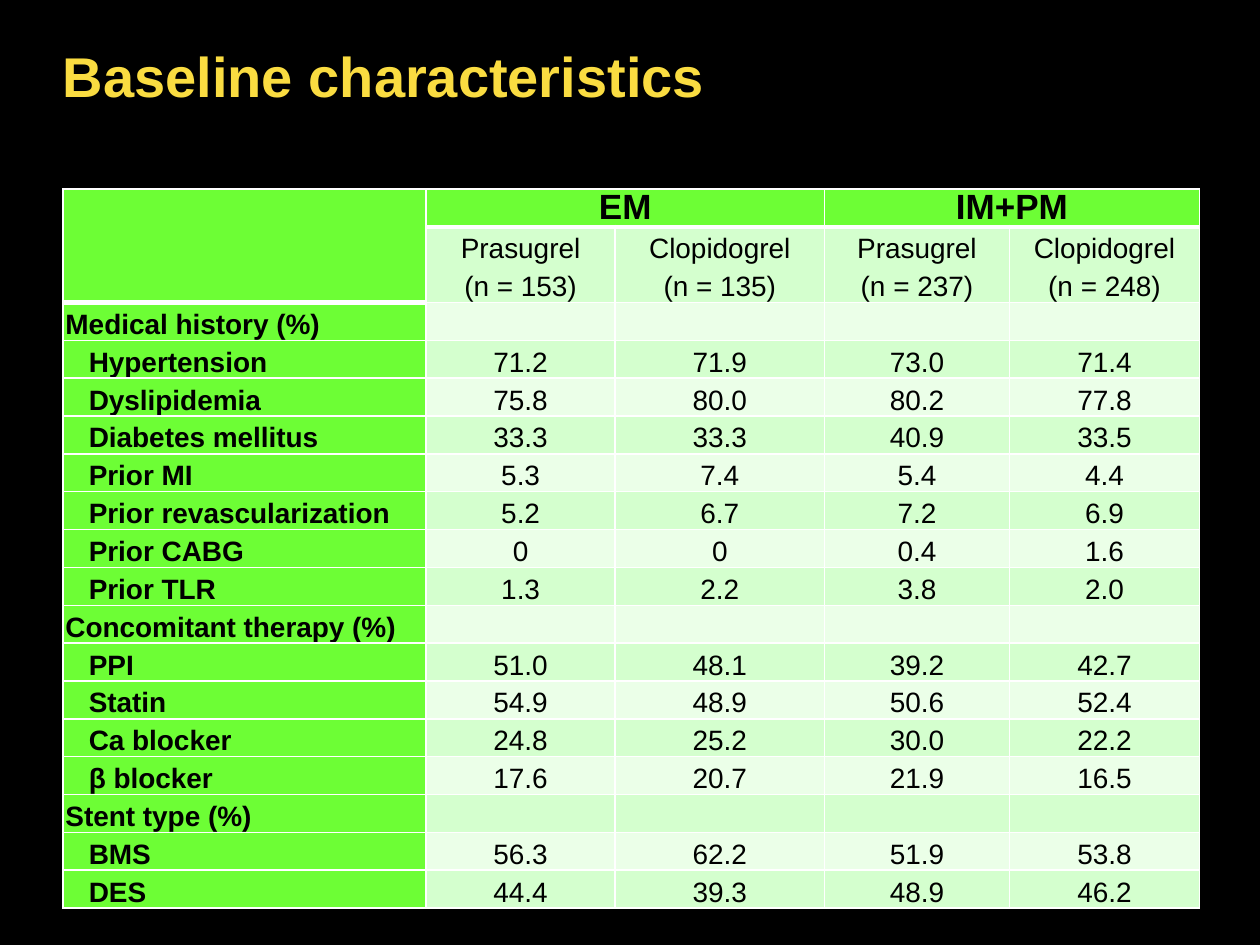
from dataclasses import dataclass

from lxml import etree
from pptx import Presentation
from pptx import util as u
from pptx.dml.color import RGBColor
from pptx.enum import text
from pptx.oxml.ns import qn


@dataclass(frozen=True)
class Theme:
    font: str = "Arial"
    background: str = "000000"
    title: str = "FADC41"
    ink: str = "000000"
    border: str = "FFFFFF"
    header: str = "6DFE35"
    bands: tuple = ("EBFFE8", "D4FFCE")
    title_size: float = 32
    group_size: float = 20
    body_size: float = 16
    title_spacing: float = 34
    table_spacing: float = 21.6
    thin: float = 1
    thick: float = 3


GROUPS = ("EM", "IM+PM")
ARMS = (
    ("Prasugrel", "(n = 153)"),
    ("Clopidogrel", "(n = 135)"),
    ("Prasugrel", "(n = 237)"),
    ("Clopidogrel", "(n = 248)"),
)
SECTIONS = {
    "Medical history (%)": (
        ("Hypertension", "71.2", "71.9", "73.0", "71.4"),
        ("Dyslipidemia", "75.8", "80.0", "80.2", "77.8"),
        ("Diabetes mellitus", "33.3", "33.3", "40.9", "33.5"),
        ("Prior MI", "5.3", "7.4", "5.4", "4.4"),
        ("Prior revascularization", "5.2", "6.7", "7.2", "6.9"),
        ("Prior CABG", "0", "0", "0.4", "1.6"),
        ("Prior TLR", "1.3", "2.2", "3.8", "2.0"),
    ),
    "Concomitant therapy (%)": (
        ("PPI", "51.0", "48.1", "39.2", "42.7"),
        ("Statin", "54.9", "48.9", "50.6", "52.4"),
        ("Ca blocker", "24.8", "25.2", "30.0", "22.2"),
        ("β blocker", "17.6", "20.7", "21.9", "16.5"),
    ),
    "Stent type (%)": (
        ("BMS", "56.3", "62.2", "51.9", "53.8"),
        ("DES", "44.4", "39.3", "48.9", "46.2"),
    ),
}
COLUMN_WIDTHS = (7.32, 3.81, 4.22, 3.73, 3.83)
ROW_HEIGHT = 0.76
CELL_MARGIN = 0.05
ITEM_INDENT = 0.47


class SlideBuilder:
    def __init__(self, slide, theme):
        self.slide = slide
        self.theme = theme

    def background(self):
        fill = self.slide.background.fill
        fill.solid()
        fill.fore_color.rgb = RGBColor.from_string(self.theme.background)

    def add_lines(self, frame, lines, size, color, bold, spacing, align):
        for index, line in enumerate(lines):
            paragraph = frame.paragraphs[0] if index == 0 else frame.add_paragraph()
            paragraph.alignment = align
            paragraph.line_spacing = u.Pt(spacing)
            run = paragraph.add_run()
            run.text = line
            run.font.name = self.theme.font
            run.font.size = u.Pt(size)
            run.font.bold = bold
            run.font.color.rgb = RGBColor.from_string(color)

    def title(self, words, left, top, width, height):
        box = self.slide.shapes.add_textbox(
            u.Cm(left), u.Cm(top), u.Cm(width), u.Cm(height))
        frame = box.text_frame
        frame.word_wrap = True
        frame.vertical_anchor = text.MSO_ANCHOR.MIDDLE
        self.add_lines(frame, [words], self.theme.title_size, self.theme.title,
                       True, self.theme.title_spacing, text.PP_ALIGN.LEFT)

    def borders(self, cell, top, bottom):
        properties = cell._tc.get_or_add_tcPr()
        weights = {"lnL": self.theme.thin, "lnR": self.theme.thin,
                   "lnT": top, "lnB": bottom}
        for position, (side, weight) in enumerate(weights.items()):
            line = etree.Element(qn(f"a:{side}"), w=str(u.Pt(weight)))
            fill = etree.SubElement(line, qn("a:solidFill"))
            etree.SubElement(fill, qn("a:srgbClr"), val=self.theme.border)
            properties.insert(position, line)

    def table(self, left, top, widths, heights):
        frame = self.slide.shapes.add_table(
            len(heights), len(widths), u.Cm(left), u.Cm(top),
            u.Cm(sum(widths)), u.Cm(sum(heights)))
        table = frame.table
        table.first_row = table.horz_banding = False
        for column, width in zip(table.columns, widths):
            column.width = u.Cm(width)
        for row, height in zip(table.rows, heights):
            row.height = u.Cm(height)
        heavy = {(0, column) for column in range(len(widths))} | {(1, 0)}
        for row in range(len(heights)):
            for column in range(len(widths)):
                cell = table.cell(row, column)
                cell.margin_left = cell.margin_right = u.Cm(CELL_MARGIN)
                cell.margin_top = cell.margin_bottom = 0
                is_header = row == 0 or column == 0
                cell.fill.solid()
                cell.fill.fore_color.rgb = RGBColor.from_string(
                    self.theme.header if is_header else self.theme.bands[row % 2])
                self.borders(cell, *(
                    self.theme.thick if edge in heavy else self.theme.thin
                    for edge in ((row - 1, column), (row, column))))
        return table

    def cell(self, cell, lines, size=None, bold=False, align=text.PP_ALIGN.CENTER):
        self.add_lines(cell.text_frame, lines, size or self.theme.body_size,
                       self.theme.ink, bold, self.theme.table_spacing, align)

    def label(self, cell, words, indent=0):
        cell.margin_left = u.Cm(CELL_MARGIN + indent)
        self.cell(cell, [words], bold=True, align=text.PP_ALIGN.LEFT)


def fill_characteristics(builder, table):
    table.cell(0, 0).merge(table.cell(1, 0))
    for index, group in enumerate(GROUPS):
        first = 1 + 2 * index
        table.cell(0, first).merge(table.cell(0, first + 1))
        builder.cell(table.cell(0, first), [group], builder.theme.group_size, True)
    for column, arm in enumerate(ARMS, 1):
        builder.cell(table.cell(1, column), arm)
    row = 2
    for section, items in SECTIONS.items():
        builder.label(table.cell(row, 0), section)
        for row, (name, *values) in enumerate(items, row + 1):
            builder.label(table.cell(row, 0), name, ITEM_INDENT)
            for column, value in enumerate(values, 1):
                builder.cell(table.cell(row, column), [value])
        row += 1


def main():
    presentation = Presentation()
    presentation.slide_width = u.Cm(25.4)
    presentation.slide_height = u.Cm(19.05)
    slide = presentation.slides.add_slide(presentation.slide_layouts[6])
    builder = SlideBuilder(slide, Theme())
    builder.background()
    builder.title("Baseline characteristics", 1.02, 0.2, 22.86, 2.77)
    body_rows = sum(1 + len(items) for items in SECTIONS.values())
    heights = [ROW_HEIGHT, 2 * ROW_HEIGHT] + [ROW_HEIGHT] * body_rows
    table = builder.table(1.27, 3.81, COLUMN_WIDTHS, heights)
    fill_characteristics(builder, table)
    presentation.save("out.pptx")


if __name__ == "__main__":
    main()
